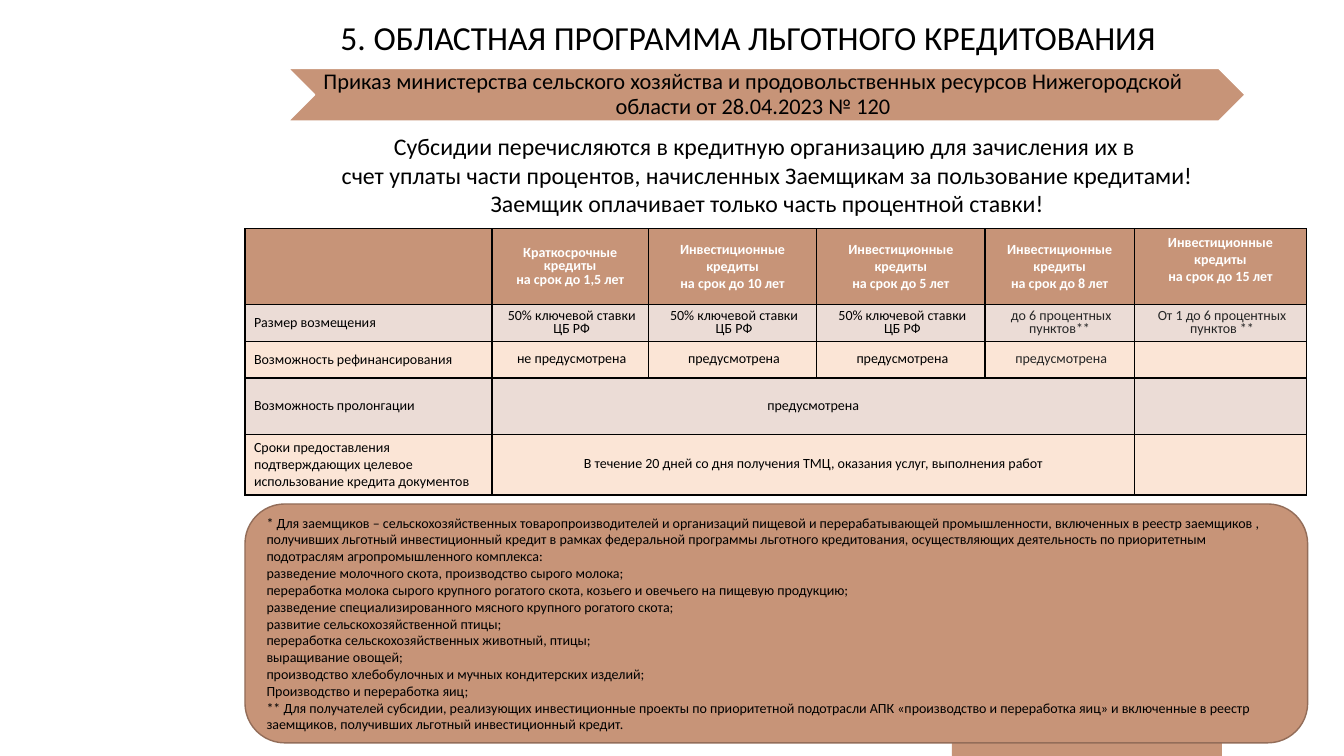
from lxml.etree import SubElement
from pptx import Presentation
from pptx.dml.color import RGBColor
from pptx.enum.shapes import MSO_SHAPE
from pptx.enum.text import MSO_ANCHOR, MSO_AUTO_SIZE, PP_ALIGN
from pptx.oxml.ns import qn
from pptx.util import Inches, Pt

FONT = "Calibri"
BLACK = RGBColor(0x00, 0x00, 0x00)
WHITE = RGBColor(0xFF, 0xFF, 0xFF)
GRAY = RGBColor(0x26, 0x26, 0x26)
CLAY = RGBColor(0xC7, 0x94, 0x78)
CLAY_DARK = RGBColor(0x93, 0x6D, 0x59)
ROSE = RGBColor(0xEB, 0xDC, 0xD6)
PEACH = RGBColor(0xFB, 0xE5, 0xD6)

# Content
TITLE = "5. ОБЛАСТНАЯ ПРОГРАММА ЛЬГОТНОГО КРЕДИТОВАНИЯ"
ORDER = ("Приказ министерства сельского хозяйства и продовольственных ресурсов "
         "Нижегородской области от 28.04.2023 № 120")
SUBSIDY = [
    "Субсидии перечисляются в кредитную организацию для зачисления их в ",
    "счет уплаты части процентов, начисленных Заемщикам за пользование кредитами!",
    "Заемщик оплачивает только часть процентной ставки!",
]
LOANS = [
    ("Краткосрочные кредиты", "1,5"),
    ("Инвестиционные кредиты", "10"),
    ("Инвестиционные кредиты", "5"),
    ("Инвестиционные кредиты", "8"),
    ("Инвестиционные кредиты", "15"),
]
KEY_RATE = "50% ключевой ставки ЦБ РФ"
# Row label followed by its values; a single value spans four columns
TERMS = [
    ("Размер возмещения", KEY_RATE, KEY_RATE, KEY_RATE,
     "до 6 процентных пунктов** ", "От 1 до 6 процентных пунктов **"),
    ("Возможность рефинансирования", "не предусмотрена", "предусмотрена",
     "предусмотрена", "предусмотрена", ""),
    ("Возможность пролонгации", "предусмотрена"),
    ("Сроки предоставления подтверждающих целевое использование кредита документов",
     "В течение 20 дней со дня получения ТМЦ, оказания услуг, выполнения работ"),
]
COLUMN_WIDTHS = [2.45, 1.55, 1.67, 1.67, 1.48, 1.71]
ROW_HEIGHTS = [0.75, 0.37, 0.36, 0.56, 0.59]
NOTES = [
    "* Для заемщиков – сельскохозяйственных товаропроизводителей и организаций пищевой и "
    "перерабатывающей промышленности, включенных в реестр заемщиков , получивших льготный "
    "инвестиционный кредит в рамках федеральной программы льготного кредитования, "
    "осуществляющих деятельность по приоритетным подотраслям агропромышленного комплекса:",
    "разведение молочного скота, производство сырого молока;",
    "переработка молока сырого крупного рогатого скота, козьего и овечьего на пищевую продукцию;",
    "разведение специализированного мясного крупного рогатого скота;",
    "развитие сельскохозяйственной птицы;",
    "переработка сельскохозяйственных животный, птицы;",
    "выращивание овощей;",
    "производство хлебобулочных и мучных кондитерских изделий;",
    "Производство и переработка яиц;",
    "** Для получателей субсидии, реализующих инвестиционные проекты по приоритетной "
    "подотрасли АПК «производство и переработка яиц» и включенные в реестр заемщиков, "
    "получивших льготный инвестиционный кредит.",
]


def place(shape, left, top, width, height):
    shape.left, shape.top = Inches(left), Inches(top)
    shape.width, shape.height = Inches(width), Inches(height)


def write(frame, lines, size, color=BLACK, align=PP_ALIGN.CENTER, spacing=1.0, bold=False):
    for index, line in enumerate(lines):
        para = frame.add_paragraph() if index else frame.paragraphs[0]
        para.alignment = align
        para.line_spacing = spacing
        span = para.add_run()
        span.text = line
        span.font.name, span.font.size = FONT, Pt(size)
        span.font.color.rgb, span.font.bold = color, bold


def set_insets(box, left, top, right, bottom):
    box.margin_left, box.margin_top = Inches(left), Inches(top)
    box.margin_right, box.margin_bottom = Inches(right), Inches(bottom)


def add_panel(page, kind, area, fill, line=None):
    panel = page.shapes.add_shape(kind, *map(Inches, area))
    panel.shadow.inherit = False
    panel.fill.solid()
    panel.fill.fore_color.rgb = fill
    if line is None:
        panel.line.fill.background()
    else:
        panel.line.color.rgb, panel.line.width = line, Pt(1)
    return panel


def style_cell(cell, fill):
    properties = cell._tc.get_or_add_tcPr()
    for side in ("a:lnL", "a:lnR", "a:lnT", "a:lnB"):
        border = SubElement(properties, qn(side), w=str(Pt(1)))
        SubElement(SubElement(border, qn("a:solidFill")), qn("a:srgbClr"), val=str(BLACK))
    cell.fill.solid()
    cell.fill.fore_color.rgb = fill
    cell.vertical_anchor = MSO_ANCHOR.MIDDLE


def fill_cell(cell, lines, insets, **style):
    set_insets(cell, *insets)
    write(cell.text_frame, lines, 10, **style)


def add_terms_table(page):
    area = (2.43, 2.27, sum(COLUMN_WIDTHS), sum(ROW_HEIGHTS))
    table = page.shapes.add_table(len(ROW_HEIGHTS), len(COLUMN_WIDTHS), *map(Inches, area)).table
    for column, width in zip(table.columns, COLUMN_WIDTHS):
        column.width = Inches(width)
    for row_index, height in enumerate(ROW_HEIGHTS):
        table.rows[row_index].height = Inches(height)
        fill = CLAY if row_index == 0 else (PEACH, ROSE)[row_index % 2]
        for cell in table.rows[row_index].cells:
            style_cell(cell, fill)

    # Header row
    label_insets = (0.09, 0.05, 0.09, 0.05)
    for column, (loan, years) in enumerate(LOANS, 1):
        fill_cell(table.cell(0, column), [loan, f"на срок до {years} лет"], label_insets,
                  color=WHITE, bold=True, spacing=0.8 if column == 1 else 1.0)
    table.cell(0, 5).vertical_anchor = MSO_ANCHOR.TOP

    # Body rows
    for row, (label, *values) in enumerate(TERMS, 1):
        fill_cell(table.cell(row, 0), [label], label_insets, align=PP_ALIGN.LEFT)
        merged = len(values) == 1
        if merged:
            table.cell(row, 1).merge(table.cell(row, 4))
        insets = (0, 0, 0, 0) if merged else (0.12, 0.05, 0.09, 0.05)
        for column, value in enumerate(values, 1):
            if value:
                fill_cell(table.cell(row, column), [value], insets, spacing=0.8,
                          color=GRAY if column > 3 else BLACK)

    # Empty cells keep the small text size so that rows do not grow
    for cell in table.iter_cells():
        para = cell.text_frame.paragraphs[0]
        if not para.runs:
            SubElement(para._p, qn("a:endParaRPr"), sz="1000")


def main():
    deck = Presentation()
    deck.slide_width, deck.slide_height = Inches(13.33), Inches(7.5)
    page = deck.slides.add_slide(deck.slide_layouts[5])

    # Bottom accent and order banner
    add_panel(page, MSO_SHAPE.RECTANGLE, (9.44, 6.56, 2.68, 0.94), CLAY)
    add_panel(page, MSO_SHAPE.CHEVRON, (2.86, 0.68, 9.49, 0.52), CLAY, WHITE)
    order = page.shapes.add_textbox(*map(Inches, (3.07, 0.68, 8.76, 0.52))).text_frame
    order.word_wrap = True
    order.vertical_anchor = MSO_ANCHOR.MIDDLE
    set_insets(order, 0.06, 0.02, 0.02, 0.02)
    write(order, [ORDER], 16, spacing=0.9)

    # Title
    title = page.shapes.title
    place(title, 3.24, 0.12, 8.36, 0.5)
    title.text_frame.word_wrap = False
    title.text_frame.auto_size = MSO_AUTO_SIZE.NONE
    title.text_frame.vertical_anchor = MSO_ANCHOR.TOP
    write(title.text_frame, [TITLE], 24)

    # Subsidy statement
    subsidy = page.shapes.add_textbox(*map(Inches, (2.6, 1.26, 10.02, 0.96))).text_frame
    subsidy.word_wrap = True
    write(subsidy, SUBSIDY, 17)

    add_terms_table(page)

    # Footnotes
    notes = add_panel(page, MSO_SHAPE.ROUNDED_RECTANGLE, (2.43, 5, 10.54, 2.37), CLAY, CLAY_DARK)
    notes.text_frame.word_wrap = True
    notes.text_frame.vertical_anchor = MSO_ANCHOR.MIDDLE
    write(notes.text_frame, NOTES, 10, align=PP_ALIGN.LEFT)

    deck.save("out.pptx")


if __name__ == "__main__":
    main()
